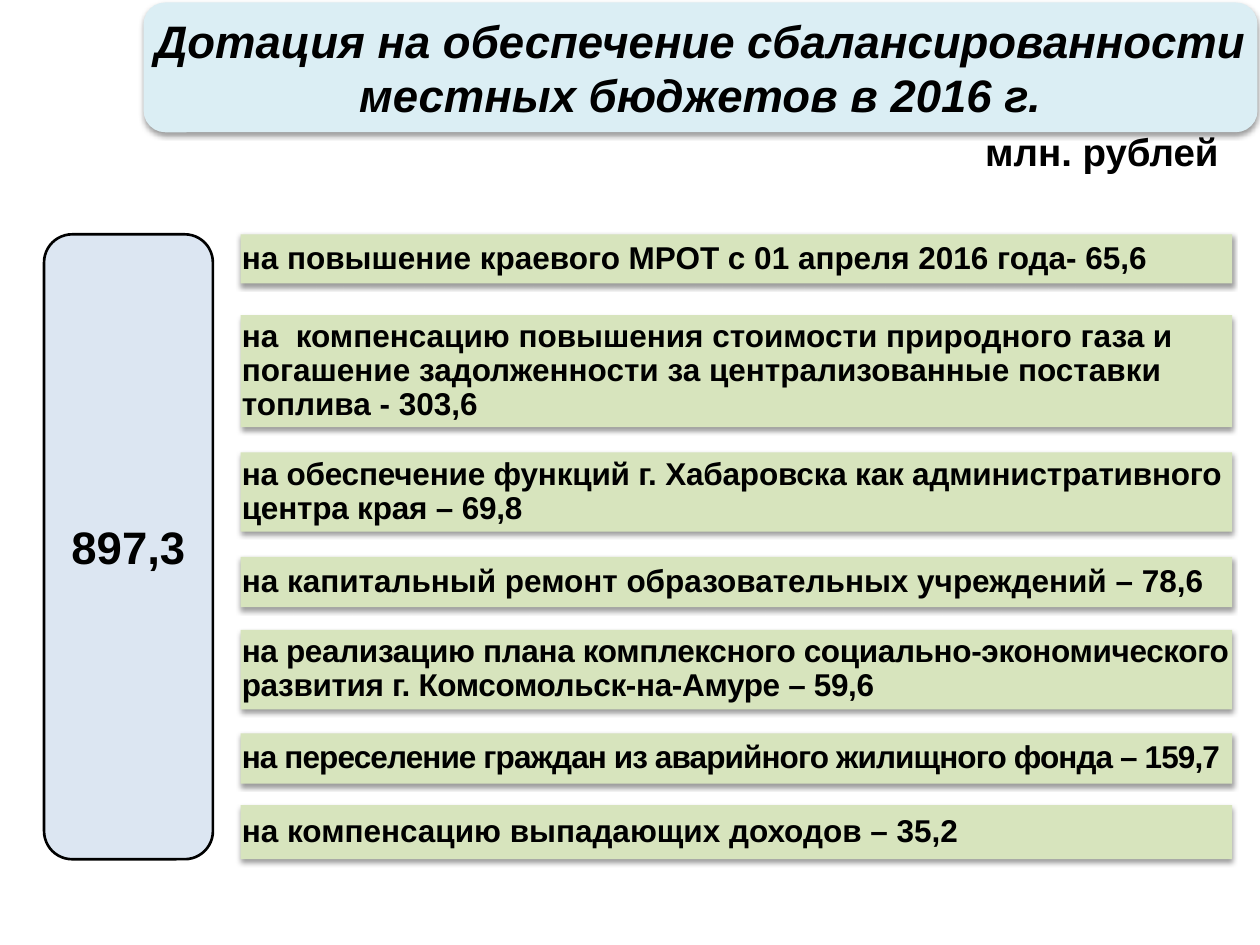
from dataclasses import dataclass

from lxml import etree
from pptx import Presentation
from pptx.dml.color import RGBColor
from pptx.enum.shapes import MSO_SHAPE
from pptx.enum.text import MSO_ANCHOR, PP_ALIGN
from pptx.oxml.ns import qn
from pptx.util import Inches, Pt

RECTANGLE = MSO_SHAPE.RECTANGLE
ROUNDED = MSO_SHAPE.ROUNDED_RECTANGLE
MIDDLE, TOP = MSO_ANCHOR.MIDDLE, MSO_ANCHOR.TOP
LEFT, CENTER, RIGHT = PP_ALIGN.LEFT, PP_ALIGN.CENTER, PP_ALIGN.RIGHT


@dataclass(frozen=True)
class Theme:
    font: str = "Arial"
    ink: str = "000000"
    title_fill: str = "DBEEF4"
    total_fill: str = "DCE6F2"
    item_fill: str = "D7E4BD"
    headline_size: int = 26
    unit_size: int = 22
    item_size: int = 18


THEME = Theme()

ITEMS = [
    (1.86, 0.39, 0, "на повышение краевого МРОТ с 01 апреля 2016 года- 65,6"),
    (2.5, 0.89, 0, "на  компенсацию повышения стоимости природного газа и погашение "
                   "задолженности за централизованные поставки топлива - 303,6"),
    (3.59, 0.63, -0.1, "на обеспечение функций г. Хабаровска как административного "
                       "центра края – 69,8"),
    (4.42, 0.4, 0, "на капитальный ремонт образовательных учреждений – 78,6"),
    (5, 0.63, -0.2, "на реализацию плана комплексного социально-экономического "
                    "развития г. Комсомольск-на-Амуре – 59,6"),
    (5.82, 0.4, -0.5, "на переселение граждан из аварийного жилищного фонда – 159,7"),
    (6.39, 0.43, 0, "на компенсацию выпадающих доходов – 35,2"),
]


def color(value):
    return RGBColor.from_string(value)


def add_panel(page, kind, box, fill):
    panel = page.shapes.add_shape(kind, *map(Inches, box))
    panel.shadow.inherit = False
    panel.fill.solid()
    panel.fill.fore_color.rgb = color(fill)
    panel.line.fill.background()
    return panel


def add_shadow(panel):
    effects = panel._element.spPr.find(qn("a:effectLst"))
    shadow = etree.SubElement(
        effects, qn("a:outerShdw"), blurRad=str(Pt(3.1)), dist=str(Pt(1.6)),
        dir="5400000", rotWithShape="0")
    tint = etree.SubElement(shadow, qn("a:srgbClr"), val=THEME.ink)
    etree.SubElement(tint, qn("a:alpha"), val="38000")


def write(shape, text, size, align, anchor=MIDDLE, inset=None,
          italic=False, spacing=0, line_spacing=None):
    frame = shape.text_frame
    frame.word_wrap = True
    frame.vertical_anchor = anchor
    if inset is not None:
        frame.margin_left = frame.margin_right = Inches(inset)
        frame.margin_top = frame.margin_bottom = Inches(inset)
    para = frame.paragraphs[0]
    para.alignment = align
    if line_spacing:
        para.line_spacing = line_spacing
    span = para.add_run()
    span.text = text
    span.font.name = THEME.font
    span.font.size = Pt(size)
    span.font.bold = True
    span.font.italic = italic
    span.font.color.rgb = color(THEME.ink)
    if spacing:
        span._r.get_or_add_rPr().set("spc", str(round(spacing * 100)))


def add_title(page, box):
    panel = add_panel(page, ROUNDED, box, THEME.title_fill)
    add_shadow(panel)
    write(panel, "Дотация на обеспечение сбалансированности местных бюджетов в 2016 г.",
          THEME.headline_size, CENTER, inset=0, italic=True)


def add_unit(page, box):
    label = page.shapes.add_textbox(*map(Inches, box))
    write(label, "млн. рублей", THEME.unit_size, RIGHT, anchor=TOP)


def add_total(page, box):
    panel = add_panel(page, ROUNDED, box, THEME.total_fill)
    panel.line.color.rgb = color(THEME.ink)
    panel.line.width = Pt(1.5)
    write(panel, "897,3", THEME.headline_size, CENTER)


def add_items(page, left, width):
    for top, height, spacing, text in ITEMS:
        panel = add_panel(page, RECTANGLE, (left, top, width, height), THEME.item_fill)
        add_shadow(panel)
        write(panel, text, THEME.item_size, LEFT, inset=0.01,
              spacing=spacing, line_spacing=0.9)


def main():
    deck = Presentation()
    deck.slide_width, deck.slide_height = Inches(10), Inches(7.5)
    page = deck.slides.add_slide(deck.slide_layouts[6])
    add_title(page, (1.14, 0.02, 8.84, 1.03))
    add_items(page, 1.91, 7.87)
    add_unit(page, (7.65, 0.97, 2.12, 0.47))
    add_total(page, (0.35, 1.86, 1.34, 4.96))
    deck.save("out.pptx")


if __name__ == "__main__":
    main()
